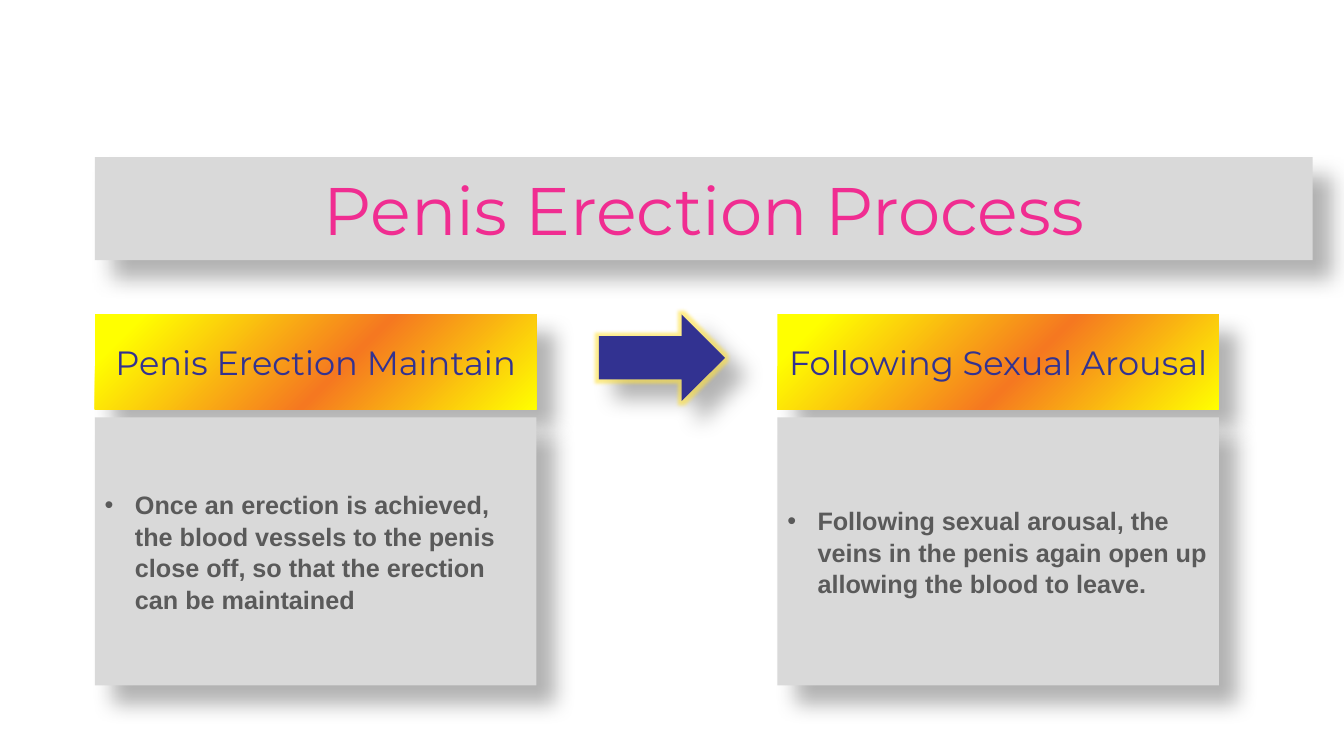
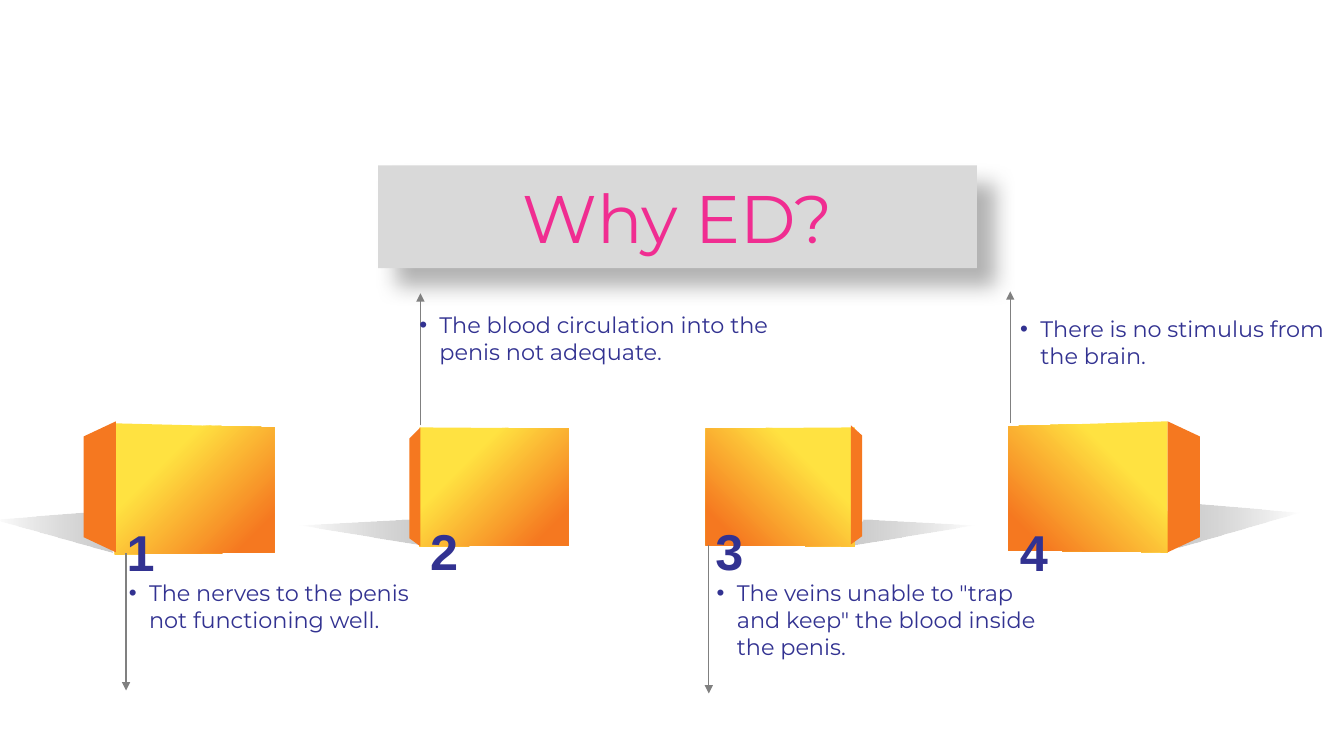
import pptx
import pptx.util
import pptx.dml.color
import pptx.enum.shapes
import pptx.enum.text
import pptx.oxml.ns
from lxml import etree

Inches = pptx.util.Inches
Pt = pptx.util.Pt
RGBColor = pptx.dml.color.RGBColor
SHAPES = pptx.enum.shapes.MSO_SHAPE
ALIGN = pptx.enum.text.PP_ALIGN
ANCHOR = pptx.enum.text.MSO_ANCHOR
AUTO_SIZE = pptx.enum.text.MSO_AUTO_SIZE
qn = pptx.oxml.ns.qn

# Shared look
NAVY = RGBColor(0x32, 0x32, 0x91)
PINK = RGBColor(0xF0, 0x2D, 0x91)
ORANGE = RGBColor(0xF5, 0x78, 0x20)
YELLOW = RGBColor(0xFF, 0xFF, 0x00)
GOLD = RGBColor(0xFF, 0xE2, 0x41)
PANEL = RGBColor(0xD9, 0xD9, 0xD9)
BODY = RGBColor(0x5A, 0x5A, 0x5A)
ARROW_GRAY = RGBColor(0x80, 0x80, 0x80)
SHADE = RGBColor(0x66, 0x66, 0x66)
WHITE = RGBColor(0xFF, 0xFF, 0xFF)
BLACK = RGBColor(0x00, 0x00, 0x00)
HEADING_FONT = "Montserrat"
BODY_FONT = "Arial"

# Gradient stops: position %, colour, opacity %
HEADER_STOPS = [(9, YELLOW, 100), (56, ORANGE, 100), (100, YELLOW, 100)]
FRONT_STOPS = [(30, GOLD, 100), (87, ORANGE, 100)]
FLOOR_STOPS = [(0, WHITE, 50), (100, SHADE, 34)]

# Slide 1 cards: left, header, body
CARDS = [
    (0.94, "Penis Erection Maintain",
     "Once an erection is achieved, the blood vessels to the penis close off, "
     "so that the erection can be maintained"),
    (7.71, "Following Sexual Arousal",
     "Following sexual arousal, the veins in the penis again open up "
     "allowing the blood to leave."),
]

# Slide 2 cubes: faces right, floor shadow, front, side
CUBES = [
    (True, [(1.12, 5.48), (-0.05, 5.16), (0.99, 5.08)],
     [(1.14, 4.2), (1.14, 5.5), (2.72, 5.48), (2.72, 4.24)],
     [(0.83, 4.33), (0.83, 5.33), (1.15, 5.48), (1.15, 4.18)]),
    (True, [(4.21, 5.41), (2.97, 5.21), (4.07, 5.15)],
     [(5.64, 5.41), (4.16, 5.42), (4.16, 4.24), (5.64, 4.25)],
     [(4.06, 4.35), (4.06, 5.34), (4.17, 5.42), (4.17, 4.24)]),
    (False, [(8.44, 5.41), (9.66, 5.21), (8.57, 5.15)],
     [(7, 5.41), (8.48, 5.42), (8.48, 4.24), (7, 4.25)],
     [(8.55, 4.32), (8.55, 5.32), (8.44, 5.4), (8.44, 4.22)]),
    (False, [(11.69, 5.43), (12.89, 5.09), (11.82, 5)],
     [(11.58, 4.18), (11.58, 5.48), (10, 5.46), (10, 4.23)],
     [(11.9, 4.33), (11.9, 5.33), (11.58, 5.48), (11.58, 4.18)]),
]

# Slide 2 causes: number position, arrow x, start y, end y, note box, note
CAUSES = [
    ((1.27, 5.07), 1.25, 5.49, 6.85, (1.18, 5.7, 3.4, 0.64),
     "The nerves to the penis not functioning well."),
    ((4.28, 5.06), 4.17, 4.22, 2.91, (4.06, 3.04, 3.85, 0.64),
     "The blood circulation into the penis not adequate."),
    ((7.11, 5.06), 7.03, 5.41, 6.88, (7.01, 5.7, 3.51, 0.91),
     'The veins unable to "trap and keep" the blood inside the penis.'),
    ((10.13, 5.07), 10.02, 4.2, 2.89, (10.02, 3.08, 3.31, 0.64),
     "There is no stimulus from the brain."),
]


# Formatting helpers
def add_node(parent, tag, **attributes):
    values = {name: str(value) for name, value in attributes.items()}
    return etree.SubElement(parent, qn(tag), values)


def add_color(parent, color, opacity):
    node = add_node(parent, "a:srgbClr", val=color)
    if opacity < 100:
        add_node(node, "a:alpha", val=opacity * 1000)


def set_plain(shape, color):
    shape.fill.solid()
    shape.fill.fore_color.rgb = color
    shape.line.fill.background()
    shape.shadow.inherit = False


def set_gradient(shape, stops, angle):
    shape.fill.background()
    shape.line.fill.background()
    shape.shadow.inherit = False
    properties = shape._element.spPr
    gradient = etree.Element(qn("a:gradFill"), rotWithShape="1")
    stop_list = add_node(gradient, "a:gsLst")
    for position, color, opacity in stops:
        stop = add_node(stop_list, "a:gs", pos=position * 1000)
        add_color(stop, color, opacity)
    add_node(gradient, "a:lin", ang=angle * 60000, scaled=0)
    properties.replace(properties.find(qn("a:noFill")), gradient)


def add_effects(shape, glow=None):
    effects = shape._element.spPr.find(qn("a:effectLst"))
    if glow is not None:
        add_color(add_node(effects, "a:glow", rad=Pt(5)), glow, 60)
    shadow = add_node(effects, "a:outerShdw", blurRad=Pt(15), dist=Pt(18),
                      dir=45 * 60000, algn="tl", rotWithShape=0)
    add_color(shadow, BLACK, 30)


def write(shape, text, size, color, font=HEADING_FONT, bold=False,
          align=ALIGN.CENTER, anchor=ANCHOR.MIDDLE, bullet_indent=None):
    frame = shape.text_frame
    frame.word_wrap = True
    frame.auto_size = AUTO_SIZE.NONE
    frame.vertical_anchor = anchor
    para = frame.paragraphs[0]
    para.alignment = align
    if bullet_indent:
        properties = para._p.get_or_add_pPr()
        properties.set("marL", str(Inches(bullet_indent)))
        properties.set("indent", str(-Inches(bullet_indent)))
        add_node(properties, "a:buFont", typeface="Arial")
        add_node(properties, "a:buChar", char="•")
    span = para.add_run()
    span.text = text
    span.font.size = Pt(size)
    span.font.name = font
    span.font.bold = bold
    span.font.color.rgb = color
    return para


# Elements
def add_titled_page(deck, text, left, top, width):
    page = deck.slides.add_slide(deck.slide_layouts[5])
    title = page.shapes.title
    title.left, title.top = Inches(left), Inches(top)
    title.width, title.height = Inches(width), Inches(1.02)
    set_plain(title, PANEL)
    add_effects(title)
    write(title, text, 48, PINK)
    return page


def add_preset(page, kind, left, top, width, height):
    return page.shapes.add_shape(kind, Inches(left), Inches(top),
                                 Inches(width), Inches(height))


def add_card(page, left, header_text, body_text):
    header = add_preset(page, SHAPES.RECTANGLE, left, 3.12, 4.38, 0.94)
    set_gradient(header, HEADER_STOPS, 45)
    add_effects(header)
    write(header, header_text, 24, NAVY)
    body = add_preset(page, SHAPES.RECTANGLE, left, 4.14, 4.38, 2.66)
    set_plain(body, PANEL)
    add_effects(body)
    para = write(body, body_text, 18, BODY, BODY_FONT, True, ALIGN.LEFT,
                 bullet_indent=0.3)
    para.line_spacing = 1.04


def add_polygon(page, points):
    corners = [(Inches(x), Inches(y)) for x, y in points]
    builder = page.shapes.build_freeform(*corners[0])
    builder.add_line_segments(corners[1:], close=True)
    return builder.convert_to_shape()


def add_cube(page, faces_right, floor, front, side):
    set_gradient(add_polygon(page, floor), FLOOR_STOPS, 0 if faces_right else 180)
    set_gradient(add_polygon(page, front), FRONT_STOPS, 45 if faces_right else 135)
    set_plain(add_polygon(page, side), ORANGE)


def add_textbox(page, left, top, width, height):
    return page.shapes.add_textbox(Inches(left), Inches(top),
                                   Inches(width), Inches(height))


def add_arrow(page, x, start, end):
    arrow = page.shapes.add_connector(
        pptx.enum.shapes.MSO_CONNECTOR.STRAIGHT,
        Inches(x), Inches(start), Inches(x), Inches(end))
    arrow.line.color.rgb = ARROW_GRAY
    arrow.line.width = Pt(1)
    add_node(arrow.line._get_or_add_ln(), "a:tailEnd", type="triangle")
    add_node(arrow._element.spPr, "a:effectLst")


def add_cause(page, number, position, x, start, end, note_box, note_text):
    add_arrow(page, x, start, end)
    note = add_textbox(page, *note_box)
    write(note, note_text, 16, NAVY, align=ALIGN.LEFT, anchor=ANCHOR.TOP,
          bullet_indent=0.2)
    note.text_frame.auto_size = AUTO_SIZE.SHAPE_TO_FIT_TEXT
    label = add_textbox(page, *position, 0.25, 0.31)
    write(label, str(number), 36, NAVY, BODY_FONT, True, anchor=ANCHOR.TOP)
    label.text_frame.word_wrap = False
    label.text_frame.margin_top = Inches(0.1)


# Slides
def build_process(deck):
    page = add_titled_page(deck, "Penis Erection Process", 0.94, 1.56, 12.08)
    for card in CARDS:
        add_card(page, *card)
    arrow = add_preset(page, SHAPES.RIGHT_ARROW, 5.94, 3.12, 1.25, 0.86)
    set_plain(arrow, NAVY)
    add_effects(arrow, glow=GOLD)


def build_causes(deck):
    page = add_titled_page(deck, "Why ED?", 3.75, 1.64, 5.94)
    for cube in CUBES:
        add_cube(page, *cube)
    for number, cause in enumerate(CAUSES, start=1):
        add_cause(page, number, *cause)


def main():
    deck = pptx.Presentation()
    deck.slide_width, deck.slide_height = Inches(13.33), Inches(7.5)
    build_process(deck)
    build_causes(deck)
    deck.save("out.pptx")


if __name__ == "__main__":
    main()
